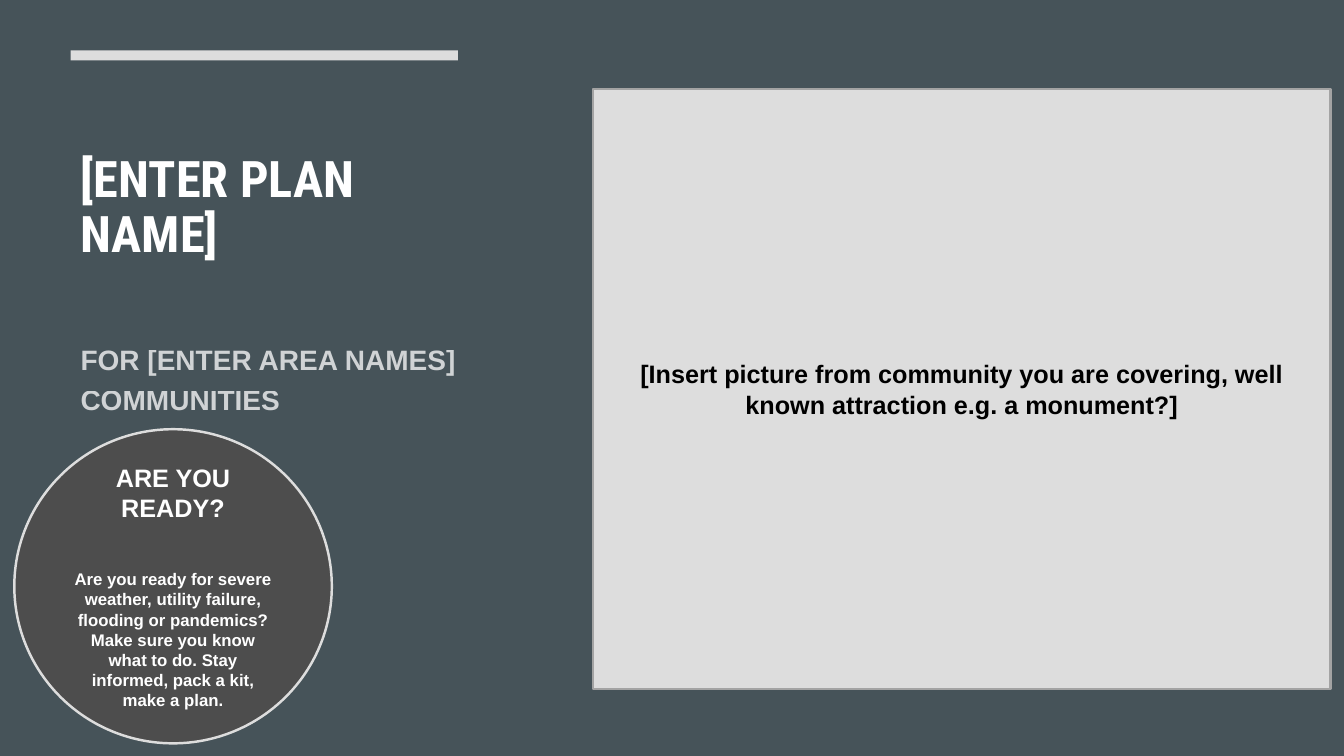
"""Build the cover slide of a community emergency plan."""
from dataclasses import dataclass
from typing import Optional

from lxml import etree
from pptx import Presentation
from pptx.dml.color import RGBColor
from pptx.enum.shapes import MSO_SHAPE
from pptx.enum.text import MSO_ANCHOR, MSO_AUTO_SIZE, PP_ALIGN
from pptx.oxml.ns import qn
from pptx.shapes.autoshape import Shape
from pptx.slide import Slide
from pptx.util import Inches, Pt

RECTANGLE, OVAL = MSO_SHAPE.RECTANGLE, MSO_SHAPE.OVAL
TOP, MIDDLE = MSO_ANCHOR.TOP, MSO_ANCHOR.MIDDLE
LEFT, CENTER = PP_ALIGN.LEFT, PP_ALIGN.CENTER
NO_AUTOFIT = MSO_AUTO_SIZE.NONE

SLATE = RGBColor(0x46, 0x53, 0x59)
CHARCOAL = RGBColor(0x4D, 0x4D, 0x4D)
SILVER = RGBColor(0xDD, 0xDD, 0xDD)
GRAY = RGBColor(0xA3, 0xA3, 0xA3)
WHITE = RGBColor(0xFF, 0xFF, 0xFF)
BLACK = RGBColor(0x00, 0x00, 0x00)

SLIDE_WIDTH, SLIDE_HEIGHT = Inches(13.33), Inches(7.5)
COLUMNS, ROWS = 16, 9
TITLE_ONLY = 5


@dataclass(frozen=True)
class Area:
    """A rectangle in grid columns and rows."""

    column: float
    row: float
    columns: float
    rows: float

    def box(self) -> tuple[int, int, int, int]:
        """Return left, top, width and height in slide units."""
        column_width, row_height = SLIDE_WIDTH / COLUMNS, SLIDE_HEIGHT / ROWS
        return (round(self.column * column_width), round(self.row * row_height),
                round(self.columns * column_width), round(self.rows * row_height))


@dataclass(frozen=True)
class Line:
    """A paragraph with its format."""

    text: str
    size: int
    color: RGBColor = WHITE
    font: str = "Arial"
    align: PP_ALIGN = CENTER
    spacing: float = 1.0
    before: float = 0
    after: float = 0


@dataclass(frozen=True)
class Panel:
    """A filled shape with an optional outline and text."""

    area: Area
    fill: RGBColor
    outline: Optional[RGBColor] = None
    kind: MSO_SHAPE = RECTANGLE
    lines: tuple[Line, ...] = ()


BACKDROP = Panel(Area(0, 0, COLUMNS, ROWS), SLATE)
TITLE_AREA = Area(0.84, 0.35, 4.61, 4.27)
SUBTITLE_AREA = Area(0.84, 3.94, 4.85, 1.5)
TITLE = Line("[ENTER PLAN NAME]", 36, font="Roboto Condensed", align=LEFT, spacing=0.9)
SUBTITLE = Line("FOR [ENTER AREA NAMES] COMMUNITIES", 20, align=LEFT,
                spacing=1.2, before=4, after=6)
SUBTITLE_OPACITY = 75
PANELS = (
    Panel(Area(0.84, 0.6, 4.61, 0.12), SILVER),
    Panel(Area(0.17, 5.11, 3.78, 3.74), CHARCOAL, SILVER, OVAL, (
        Line("ARE YOU READY?", 18, after=33),
        Line("Are you ready for severe weather, utility failure, flooding or pandemics? "
             "Make sure you know what to do. Stay informed, pack a kit, make a plan.",
             12, after=6))),
    Panel(Area(7.06, 1.06, 8.78, 7.14), SILVER, GRAY, RECTANGLE, (
        Line("[Insert picture from community you are covering, "
             "well known attraction e.g. a monument?]", 18, BLACK),)),
)


def write_lines(shape: Shape, lines: tuple[Line, ...], anchor: MSO_ANCHOR) -> None:
    """Fill a shape with formatted paragraphs."""
    frame = shape.text_frame
    frame.word_wrap = True
    frame.auto_size = NO_AUTOFIT
    frame.vertical_anchor = anchor
    for index, line in enumerate(lines):
        paragraph = frame.add_paragraph() if index else frame.paragraphs[0]
        paragraph.text = line.text
        paragraph.alignment = line.align
        paragraph.line_spacing = line.spacing
        paragraph.space_before = Pt(line.before)
        paragraph.space_after = Pt(line.after)
        font = paragraph.font
        font.name, font.size, font.bold = line.font, Pt(line.size), True
        font.color.rgb = line.color


def add_panel(slide: Slide, panel: Panel) -> Shape:
    """Draw a panel and return its shape."""
    shape = slide.shapes.add_shape(panel.kind, *panel.area.box())
    shape.shadow.inherit = False
    shape.fill.solid()
    shape.fill.fore_color.rgb = panel.fill
    if panel.outline is None:
        shape.line.fill.background()
    else:
        shape.line.color.rgb = panel.outline
        shape.line.width = Pt(1.75)
    if panel.lines:
        write_lines(shape, panel.lines, MIDDLE)
    return shape


def set_text_opacity(shape: Shape, percent: int) -> None:
    """Make the text colour of a shape partly transparent."""
    for color in shape.text_frame.paragraphs[0].font.fill._xPr.iter(qn("a:srgbClr")):
        etree.SubElement(color, qn("a:alpha"), val=str(percent * 1000))


def main() -> None:
    """Create and save the presentation."""
    presentation = Presentation()
    presentation.slide_width, presentation.slide_height = SLIDE_WIDTH, SLIDE_HEIGHT
    slide = presentation.slides.add_slide(presentation.slide_layouts[TITLE_ONLY])

    title = slide.shapes.title
    title.left, title.top, title.width, title.height = TITLE_AREA.box()
    write_lines(title, (TITLE,), MIDDLE)
    title.element.addprevious(add_panel(slide, BACKDROP).element)

    subtitle = slide.shapes.add_textbox(*SUBTITLE_AREA.box())
    write_lines(subtitle, (SUBTITLE,), TOP)
    set_text_opacity(subtitle, SUBTITLE_OPACITY)

    for panel in PANELS:
        add_panel(slide, panel)
    presentation.save("out.pptx")


if __name__ == "__main__":
    main()
